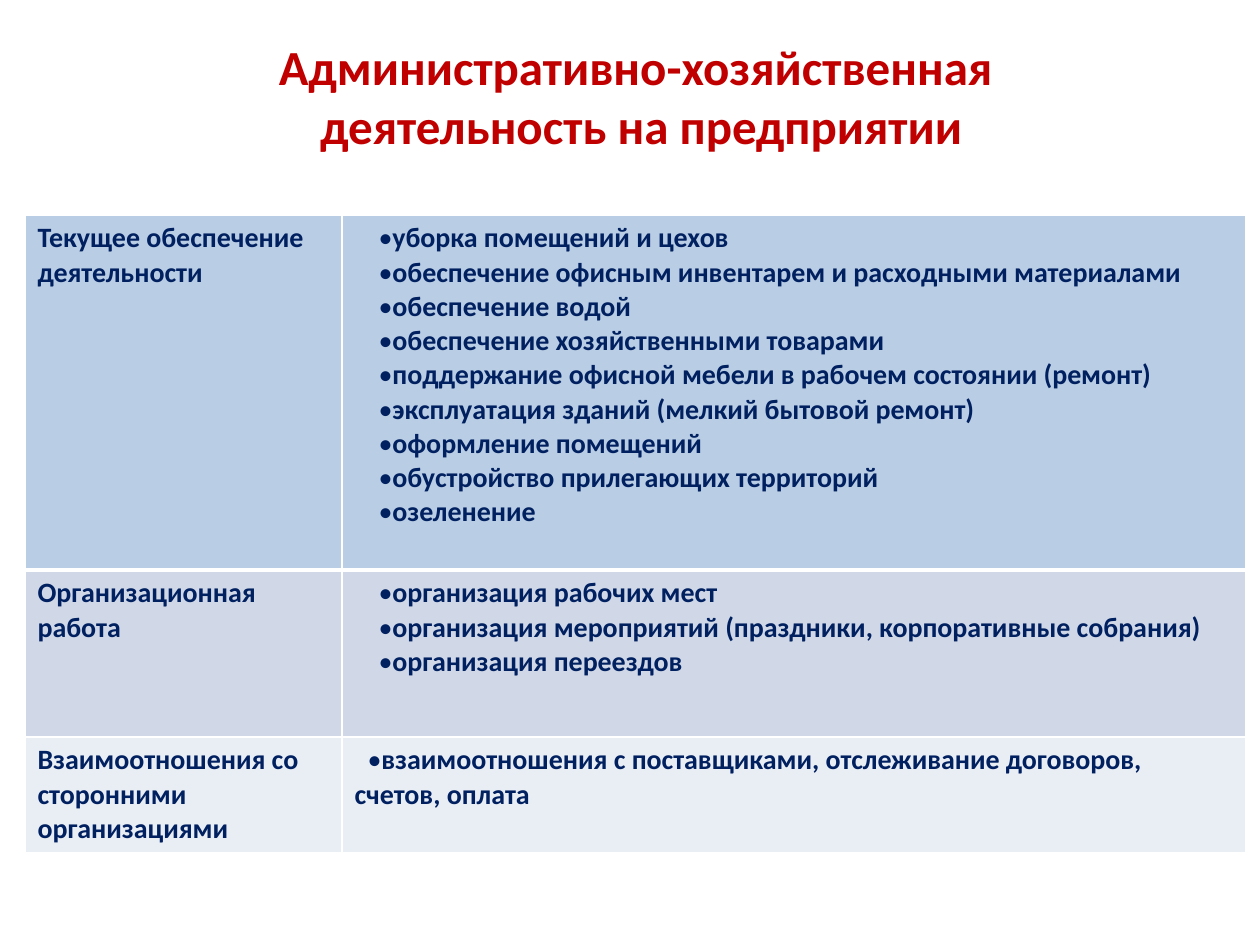
from dataclasses import dataclass

from lxml import etree
from pptx import Presentation
from pptx import util as u
from pptx.dml.color import RGBColor
from pptx.enum import text
from pptx.oxml import ns

PX = 914400 / 126


@dataclass(frozen=True)
class Theme:
    font: str = "Calibri"
    title_size: int = 28
    body_size: int = 16
    title: str = "C00000"
    body: str = "002060"
    border: str = "FFFFFF"
    thin: int = 1
    thick: int = 3


THEME = Theme()

TITLE = "Административно-хозяйственная \vдеятельность на предприятии"
COLUMNS = (317, 904)
AREAS = [
    ("Текущее обеспечение деятельности", 355, "B9CDE5", 24, [
        "уборка помещений и цехов",
        "обеспечение офисным инвентарем и расходными материалами",
        "обеспечение водой",
        "обеспечение хозяйственными товарами",
        "поддержание офисной мебели в рабочем состоянии (ремонт)",
        "эксплуатация зданий (мелкий бытовой ремонт)",
        "оформление помещений",
        "обустройство прилегающих территорий",
        "озеленение",
    ]),
    ("Организационная работа", 167, "D0D8E8", 24, [
        "организация рабочих мест",
        "организация мероприятий (праздники, корпоративные собрания)",
        "организация переездов",
    ]),
    ("Взаимоотношения со сторонними организациями", 115, "E9EDF4", 13, [
        "взаимоотношения с поставщиками, отслеживание договоров, счетов, оплата",
    ]),
]


def px(length):
    """Turn whole pixels into EMU."""
    return u.Emu(round(length * PX))


def style_runs(frame, size, color):
    """Give every run of a text frame the bold theme font."""
    for paragraph in frame.paragraphs:
        for run in paragraph.runs:
            run.font.name = THEME.font
            run.font.size = u.Pt(size)
            run.font.bold = True
            run.font.color.rgb = RGBColor.from_string(color)


def add_bullet(paragraph, indent):
    """Start a paragraph with an indented bullet in the theme font."""
    properties = paragraph._p.get_or_add_pPr()
    properties.set("marL", "0")
    properties.set("indent", str(px(indent)))
    etree.SubElement(properties, ns.qn("a:buFont"), typeface=THEME.font)
    etree.SubElement(properties, ns.qn("a:buChar"), char="•")


def set_borders(cell, top, bottom):
    """Draw the four borders of a cell, widths in points."""
    properties = cell._tc.get_or_add_tcPr()
    widths = {"L": THEME.thin, "R": THEME.thin, "T": top, "B": bottom}
    for side, width in widths.items():
        line = etree.SubElement(properties, ns.qn(f"a:ln{side}"), w=str(u.Pt(width)))
        fill = etree.SubElement(line, ns.qn("a:solidFill"))
        etree.SubElement(fill, ns.qn("a:srgbClr"), val=THEME.border)


def place_title(slide, left, top, width, height):
    """Place the centred slide title in its box."""
    title = slide.shapes.title
    title.left, title.top, title.width, title.height = map(px, (left, top, width, height))
    frame = title.text_frame
    frame.text = TITLE
    frame.auto_size = text.MSO_AUTO_SIZE.NONE
    frame.vertical_anchor = text.MSO_ANCHOR.MIDDLE
    frame.paragraphs[0].alignment = text.PP_ALIGN.CENTER
    style_runs(frame, THEME.title_size, THEME.title)


def place_areas(slide, left, top):
    """Place the table of work areas and their tasks."""
    height = sum(area[1] for area in AREAS)
    table = slide.shapes.add_table(
        len(AREAS), len(COLUMNS), px(left), px(top), px(sum(COLUMNS)), px(height)
    ).table
    table.first_row = table.horz_banding = False
    for column, width in zip(table.columns, COLUMNS):
        column.width = px(width)
    for index, (name, row_height, color, indent, tasks) in enumerate(AREAS):
        table.rows[index].height = px(row_height)
        name_cell, task_cell = table.rows[index].cells
        name_cell.text_frame.text = name
        task_cell.text_frame.text = "\n".join(tasks)
        for paragraph in task_cell.text_frame.paragraphs:
            add_bullet(paragraph, indent)
        for cell in (name_cell, task_cell):
            set_borders(
                cell,
                THEME.thick if index == 1 else THEME.thin,
                THEME.thick if index == 0 else THEME.thin,
            )
            cell.fill.solid()
            cell.fill.fore_color.rgb = RGBColor.from_string(color)
            style_runs(cell.text_frame, THEME.body_size, THEME.body)


def main():
    """Build and save the slide."""
    deck = Presentation()
    deck.slide_width, deck.slide_height = px(1260), px(945)
    slide = deck.slides.add_slide(deck.slide_layouts[5])
    place_title(slide, 74, 45, 1134, 100)
    place_areas(slide, 25, 215)
    deck.save("out.pptx")


if __name__ == "__main__":
    main()
